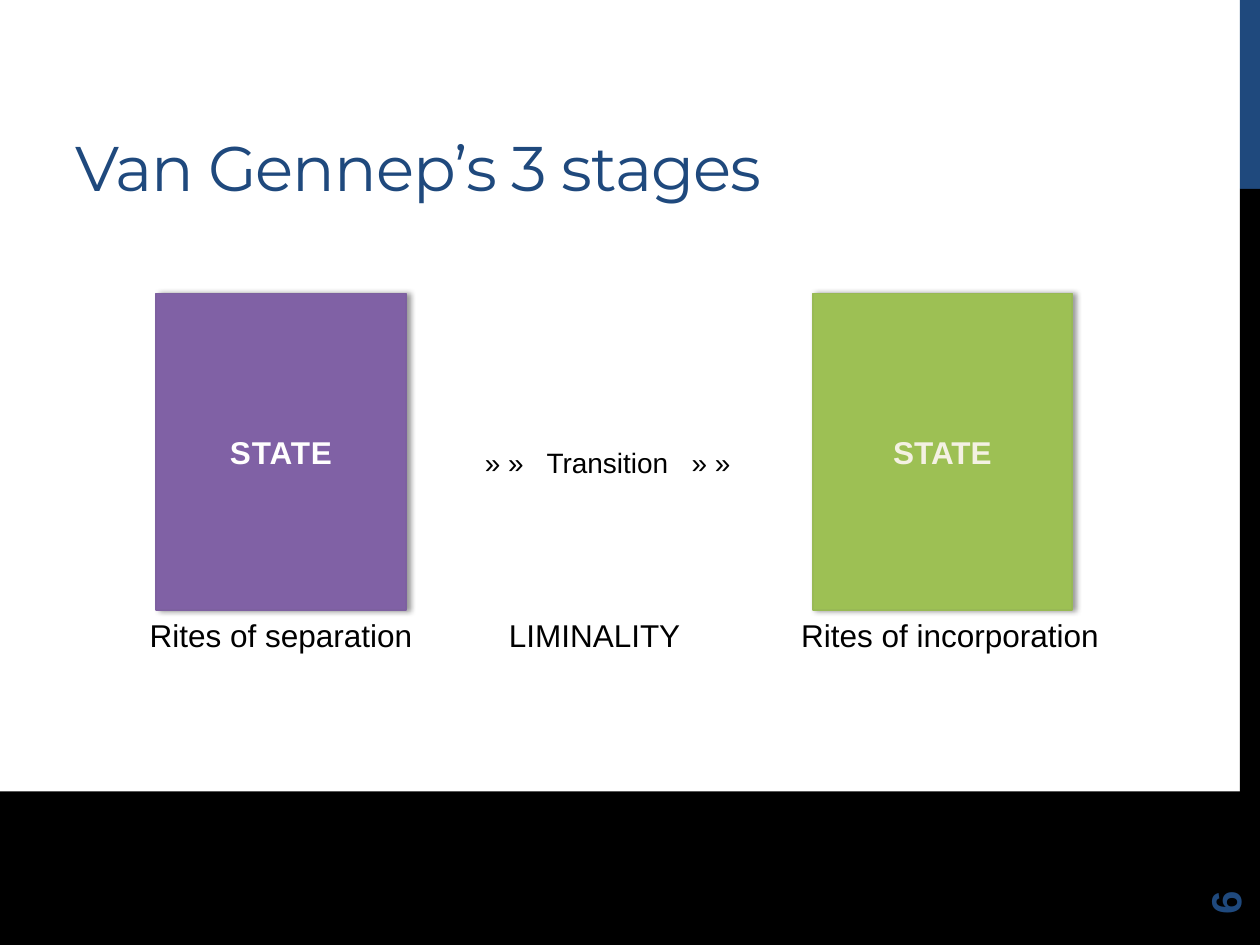
from lxml import etree
from pptx import Presentation
from pptx.dml.color import RGBColor
from pptx.enum import shapes, text
from pptx.oxml import ns
from pptx.util import Inches, Pt

# Content
TITLE = "Van Gennep’s 3 stages"
NUMBER = "6"
NAVY, BLACK = "1F497D", "000000"
BANDS = [  # left, top, width, height, fill
    (9.84, 0, 0.16, 1.5, NAVY),
    (9.84, 1.5, 0.16, 6, BLACK),
    (0, 6.28, 10, 1.22, BLACK),
]
STATES = [  # left, width, fill, line, text, outline, spacing
    (1.24, 1.98, "8061A5", "7D60A0", "FFFEFE", "E78738", 0.5),
    (6.45, 2.06, "9DC054", "98B955", "F4F1E3", "054697", 0),
]
ROWS = [  # box, size, parts, tab stops
    ((3.75, 3.47, 2.4, 0.4), 16, ["» »", "Transition", "» »"], [0.49, 1.64]),
    ((1.09, 4.84, 7.74, 0.4), 18,
     ["Rites of separation", "LIMINALITY", "Rites of incorporation"],
     [2.85, 5.17]),
]


def color(code):
    return RGBColor.from_string(code)


def node(home, tag, **attrs):
    item = etree.SubElement(home, ns.qn("a:" + tag))
    for key, val in attrs.items():
        item.set(key, str(val))
    return item


def write(para, words, size, code, font="Arial", bold=False, space=0):
    run = para.add_run()
    run.text = words
    run.font.name, run.font.size, run.font.bold = font, Pt(size), bold
    run.font.color.rgb = color(code)
    if space:
        run._r.get_or_add_rPr().set("spc", str(int(space * 100)))
    return run


def panel(box, fill, line=None):
    shape = slide.shapes.add_shape(
        shapes.MSO_SHAPE.RECTANGLE, *map(Inches, box))
    shape.shadow.inherit = False
    shape.fill.solid()
    shape.fill.fore_color.rgb = color(fill)
    if line:
        shape.line.color.rgb = color(line)
        shape.line.width = Pt(1)
    else:
        shape.line.fill.background()
    return shape


def label(box):
    shape = slide.shapes.add_textbox(*map(Inches, box))
    shape.text_frame.word_wrap = True
    shape.text_frame.vertical_anchor = text.MSO_ANCHOR.MIDDLE
    return shape


deck = Presentation()
deck.slide_width, deck.slide_height = Inches(10), Inches(7.5)
slide = deck.slides.add_slide(deck.slide_layouts[5])

# Edge bands
for *box, fill in BANDS:
    panel(box, fill)

# Title
head = slide.shapes.title
head.left, head.top, head.width, head.height = map(
    Inches, (0.5, 0.17, 6.33, 1.5))
head.text_frame.vertical_anchor = text.MSO_ANCHOR.BOTTOM
para = head.text_frame.paragraphs[0]
para.alignment = text.PP_ALIGN.LEFT
write(para, TITLE, 36, NAVY, "Montserrat", space=-0.6)

# State panels with a soft shadow and outlined text
for left, width, fill, line, ink, edge, space in STATES:
    shape = panel((left, 2.33, width, 2.51), fill, line)
    effects = shape._element.spPr.find(ns.qn("a:effectLst"))
    shade = node(effects, "outerShdw", blurRad=Pt(3.1), dist=Pt(1.8), dir=0,
                 algn="tl", rotWithShape=0)
    node(node(shade, "srgbClr", val=BLACK), "alpha", val=40000)
    shape.text_frame.vertical_anchor = text.MSO_ANCHOR.MIDDLE
    para = shape.text_frame.paragraphs[0]
    para.alignment = text.PP_ALIGN.CENTER
    props = write(para, "STATE", 18, ink, bold=True,
                  space=space)._r.get_or_add_rPr()
    ln = node(props, "ln", w=Pt(1))
    node(node(ln, "solidFill"), "srgbClr", val=edge)
    props.insert(0, ln)

# Stage rows, parts set on tab stops
for box, size, parts, stops in ROWS:
    para = label(box).text_frame.paragraphs[0]
    tabs = node(para._p.get_or_add_pPr(), "tabLst")
    for stop in stops:
        node(tabs, "tab", pos=Inches(stop), algn="l")
    write(para, "\t".join(parts), size, BLACK)

# Slide number
mark = label((9, 6.44, 1.44, 0.4))
mark.rotation = 270
write(mark.text_frame.paragraphs[0], NUMBER, 24, NAVY, bold=True)

deck.save("out.pptx")
